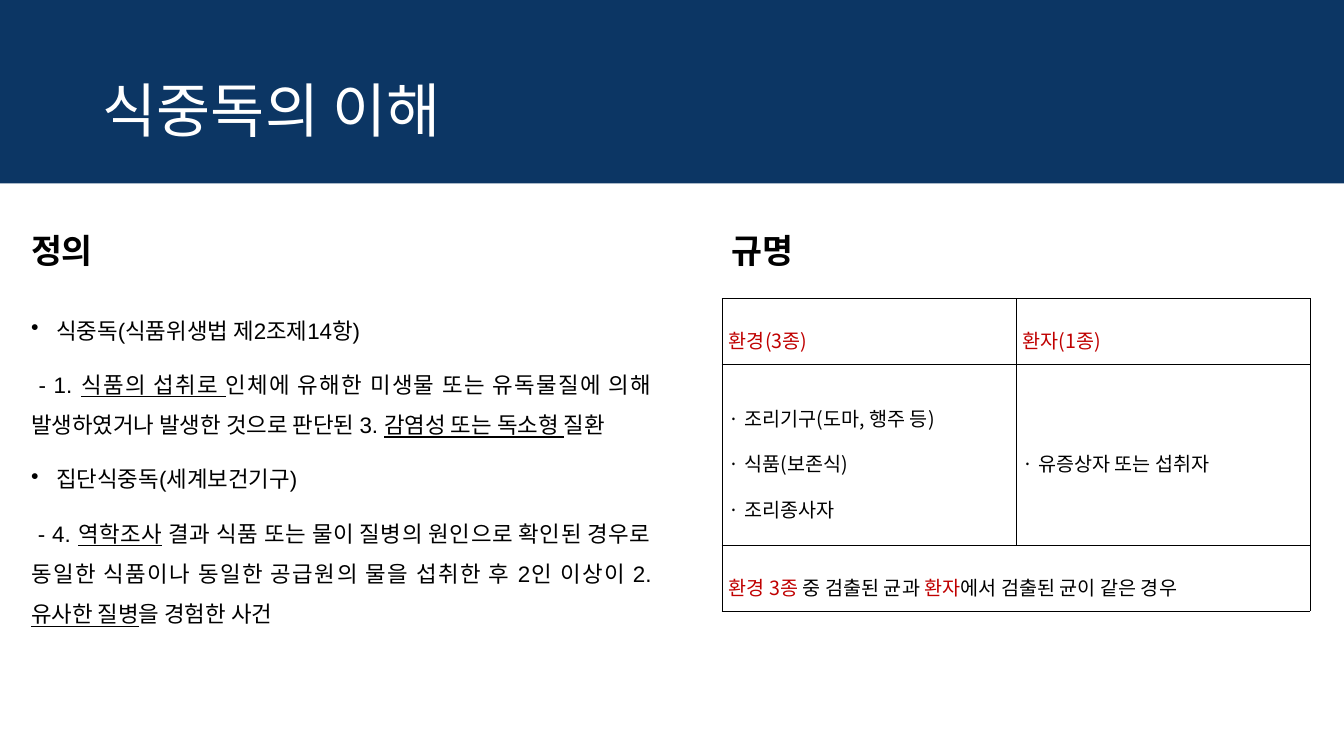
"""Build the slide on understanding food poisoning."""
from dataclasses import dataclass

from lxml import etree
from pptx import Presentation
from pptx import util as u
from pptx.dml.color import RGBColor
from pptx.enum import shapes, text
from pptx.oxml import ns

NAVY = RGBColor(0x0C, 0x36, 0x64)
WHITE = RGBColor(255, 255, 255)
BLACK = RGBColor(0, 0, 0)
RED = RGBColor(0xC0, 0, 0)
NOTO = "Noto Sans CJK KR"
MID = text.MSO_ANCHOR.MIDDLE
LOW = text.MSO_ANCHOR.BOTTOM


@dataclass(frozen=True)
class Run:
    words: str
    color: RGBColor = BLACK
    under: bool = False


@dataclass(frozen=True)
class Para:
    runs: tuple[Run, ...]
    bullet: bool = False


@dataclass(frozen=True)
class Style:
    font: dict
    para: dict


@dataclass(frozen=True)
class Box:
    place: tuple[float, float, float, float]
    anchor: text.MSO_ANCHOR
    style: Style
    paras: tuple[Para, ...]


@dataclass(frozen=True)
class Cell:
    row: int
    col: int
    paras: tuple[Para, ...]


def line(words: str, color: RGBColor = BLACK, bullet: bool = False) -> Para:
    """Make a paragraph of one run."""
    return Para((Run(words, color),), bullet)


TITLE = Style({"size": u.Pt(42), "name": NOTO}, {"line_spacing": 0.9})
HEAD = Style({"size": u.Pt(24), "name": NOTO, "bold": True},
             {"line_spacing": 0.9, "space_before": u.Pt(10)})
BODY = Style({"size": u.Pt(16), "name": "Arial"},
             {"line_spacing": 1.5, "space_before": u.Pt(10),
              "alignment": text.PP_ALIGN.JUSTIFY})
GRID = Style({"size": u.Pt(14), "name": NOTO}, {"line_spacing": 1.6})

FOOD = Para((
    Run(" - 1. "), Run("식품의 섭취로 ", under=True),
    Run("인체에 유해한 미생물 또는 유독물질에 의해 발생하였거나 발생한 것으로 판단된 3. "),
    Run("감염성 또는 독소형 ", under=True), Run("질환")))
GROUP = Para((
    Run(" - 4. "), Run("역학조사", under=True),
    Run(" 결과 식품 또는 물이 질병의 원인으로 확인된 경우로 동일한 식품이나 "
        "동일한 공급원의 물을 섭취한 후 2인 이상이 2. "),
    Run("유사한 질병", under=True), Run("을 경험한 사건")))
MATCH = Para((
    Run("환경 3종 ", RED), Run("중 검출된 균과 "),
    Run("환자", RED), Run("에서 검출된 균이 같은 경우")))

BOXES = (
    Box((0.92, 0.4, 11.5, 1.45), MID, TITLE, (line("식중독의 이해", WHITE),)),
    Box((0.21, 1.84, 6.35, 0.9), LOW, HEAD, (line("정의"),)),
    Box((7.16, 1.84, 5.79, 0.9), LOW, HEAD, (line("규명"),)),
    Box((0.21, 2.96, 6.35, 3.81), text.MSO_ANCHOR.TOP, BODY,
        (line("식중독(식품위생법 제2조제14항)", bullet=True), FOOD,
         line("집단식중독(세계보건기구)", bullet=True), GROUP)),
)
CELLS = (
    Cell(0, 0, (line("환경(3종)", RED),)),
    Cell(0, 1, (line("환자(1종)", RED),)),
    Cell(1, 0, (line("· 조리기구(도마, 행주 등)"), line("· 식품(보존식)"),
                line("· 조리종사자"))),
    Cell(1, 1, (line("· 유증상자 또는 섭취자"),)),
    Cell(2, 0, (MATCH,)),
)
ROWS = (0.65, 1.8, 0.65)
WIDE = 5.83


def apply(item, vals: dict) -> None:
    """Set each format value on an object."""
    for name, val in vals.items():
        setattr(item, name, val)


def write(frame, paras: tuple[Para, ...], style: Style) -> None:
    """Fill a text frame with styled paragraphs."""
    for i, para in enumerate(paras):
        p = frame.add_paragraph() if i else frame.paragraphs[0]
        apply(p, style.para)
        if para.bullet:
            props = p._p.get_or_add_pPr()
            props.set("marL", str(u.Inches(0.25)))
            props.set("indent", str(-u.Inches(0.25)))
            etree.SubElement(props, ns.qn("a:buChar"), char="•")
        for part in para.runs:
            run = p.add_run()
            run.text = part.words
            apply(run.font, style.font | {"underline": part.under})
            run.font.color.rgb = part.color
            etree.SubElement(run._r.rPr, ns.qn("a:ea"), typeface=NOTO)


def border(cell) -> None:
    """Draw thin black lines around a cell."""
    props = cell._tc.get_or_add_tcPr()
    for i, side in enumerate("LRTB"):
        edge = etree.Element(ns.qn(f"a:ln{side}"), w=str(u.Pt(0.28)))
        fill = etree.SubElement(edge, ns.qn("a:solidFill"))
        etree.SubElement(fill, ns.qn("a:srgbClr"), val=str(BLACK))
        props.insert(i, edge)


def band(slide) -> None:
    """Draw the title band."""
    shape = slide.shapes.add_shape(
        shapes.MSO_SHAPE.RECTANGLE, 0, 0, u.Inches(13.33), u.Inches(1.82))
    shape.shadow.inherit = False
    shape.fill.solid()
    shape.fill.fore_color.rgb = NAVY
    shape.line.fill.background()


def label(slide, box: Box) -> None:
    """Add one text box."""
    frame = slide.shapes.add_textbox(*map(u.Inches, box.place)).text_frame
    apply(frame, {"word_wrap": True, "vertical_anchor": box.anchor})
    write(frame, box.paras, box.style)


def grid(slide) -> None:
    """Add the table of causes."""
    table = slide.shapes.add_table(
        len(ROWS), 2, u.Inches(7.16), u.Inches(2.96),
        u.Inches(WIDE), u.Inches(sum(ROWS))).table
    apply(table, {"first_row": False, "horz_banding": False})
    for row, high in zip(table.rows, ROWS):
        row.height = u.Inches(high)
    table.cell(2, 0).merge(table.cell(2, 1))
    side, edge = u.Inches(0.07), u.Inches(0.02)
    for cell in table.iter_cells():
        apply(cell, {"vertical_anchor": MID, "margin_left": side,
                     "margin_right": side, "margin_top": edge,
                     "margin_bottom": edge})
        cell.fill.background()
        border(cell)
    for item in CELLS:
        write(table.cell(item.row, item.col).text_frame, item.paras, GRID)


def main() -> None:
    """Build and save the deck."""
    deck = Presentation()
    apply(deck, {"slide_width": u.Inches(13.33), "slide_height": u.Inches(7.5)})
    slide = deck.slides.add_slide(deck.slide_layouts[6])
    band(slide)
    for box in BOXES:
        label(slide, box)
    grid(slide)
    deck.save("out.pptx")


if __name__ == "__main__":
    main()
